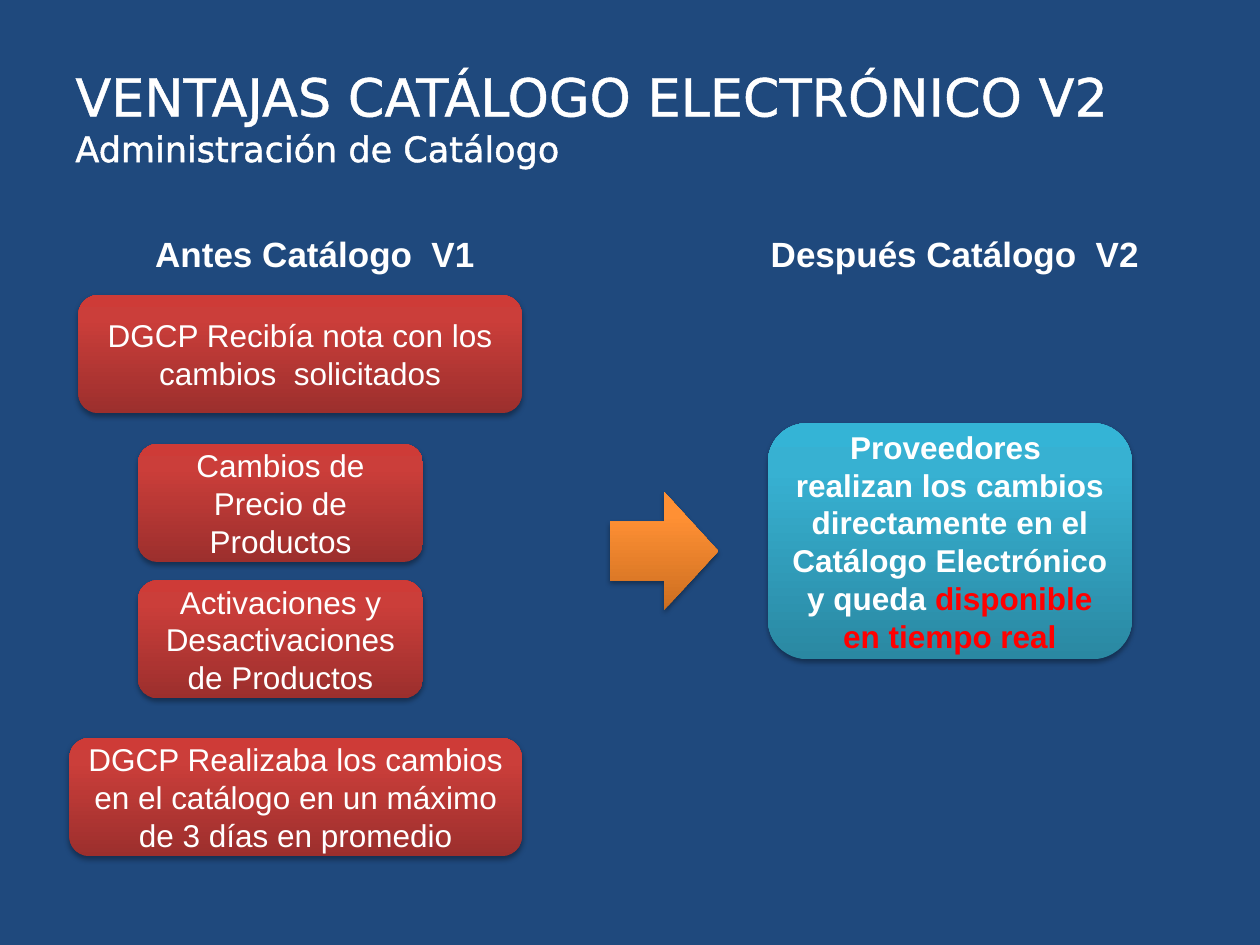
from copy import deepcopy

from lxml.etree import SubElement
from pptx import Presentation
from pptx.dml.color import RGBColor
from pptx.enum.shapes import MSO_SHAPE as Shape
from pptx.enum.text import MSO_ANCHOR as Anchor, PP_ALIGN as Align
from pptx.oxml.ns import qn
from pptx.util import Cm, Pt

COLORS = {"background": "1F497D", "text": "FFFFFF", "accent": "FF0000", "shadow": "000000"}
GRADIENTS = {  # bottom to top
    "red": ("9C2F2D", "CB3E3A", "CE3B37"),
    "blue": ("2A88A2", "37B1D2", "34B4D6"),
    "orange": ("CC6E20", "FF9034", "FF9136"),
}
STOPS = (0, 0.8, 1)

TITLE = [("VENTAJAS CATÁLOGO ELECTRÓNICO V2 ", 30), ("Administración de Catálogo", 20)]
HEADINGS = [("Antes Catálogo  V1", 1.2), ("Después Catálogo  V2", 14.1)]  # text, left
BEFORE = [  # text, left, top, width
    ("DGCP Recibía nota con los cambios  solicitados", 1.58, 5.95, 8.94),
    ("Cambios de Precio de Productos", 2.78, 8.95, 5.75),
    ("Activaciones y Desactivaciones de Productos", 2.78, 11.7, 5.75),
    ("DGCP Realizaba los cambios en el catálogo en un máximo de 3 días en promedio",
     1.4, 14.88, 9.12),
]
AFTER = [  # paragraphs of (text, color)
    [("Proveedores  realizan los cambios directamente en el Catálogo Electrónico", "text")],
    [("y queda ", "text"), ("disponible en tiempo real", "accent")],
]
BOX_H = 2.38


def rgb(name):
    return RGBColor.from_string(COLORS[name])


def add_run(p, text, size, color="text", bold=False, font="Arial"):
    r = p.add_run()
    r.text = text
    r.font.name, r.font.size, r.font.bold = font, Pt(size), bold
    r.font.color.rgb = rgb(color)
    return r


def outline(r, width):
    props = r._r.get_or_add_rPr()
    ln = SubElement(props, qn("a:ln"), w=str(Pt(width)))
    fill = SubElement(ln, qn("a:solidFill"))
    SubElement(fill, qn("a:srgbClr"), val=COLORS["text"])
    props.insert(0, ln)  # the schema wants the outline first


def add_text_box(s, left, top, width, height):
    tf = s.shapes.add_textbox(Cm(left), Cm(top), Cm(width), Cm(height)).text_frame
    tf.word_wrap = True
    return tf


def add_shadow(sp):
    sp.shadow.inherit = False
    effects = sp._element.spPr.find(qn("a:effectLst"))
    shadow = SubElement(effects, qn("a:outerShdw"), blurRad=str(Pt(3.1)),
                        dist=str(Pt(1.8)), dir="5400000", rotWithShape="0")
    color = SubElement(shadow, qn("a:srgbClr"), val=COLORS["shadow"])
    SubElement(color, qn("a:alpha"), val="35000")


def add_glossy(s, kind, gradient, left, top, width, height, paragraphs=(), bold=False):
    """Add a shape with a vertical gradient, a soft shadow and centred text."""
    sp = s.shapes.add_shape(kind, Cm(left), Cm(top), Cm(width), Cm(height))
    sp.line.fill.background()
    sp.fill.gradient()
    sp.fill.gradient_angle = 90
    stop_list = sp._element.spPr.find(qn("a:gradFill")).find(qn("a:gsLst"))
    stop_list.append(deepcopy(stop_list[-1]))
    for stop, position, color in zip(sp.fill.gradient_stops, STOPS, GRADIENTS[gradient]):
        stop.position = position
        stop.color.rgb = RGBColor.from_string(color)
    add_shadow(sp)
    tf = sp.text_frame
    tf.word_wrap = True
    tf.vertical_anchor = Anchor.MIDDLE
    for i, runs in enumerate(paragraphs):
        p = tf.add_paragraph() if i else tf.paragraphs[0]
        p.alignment = Align.CENTER
        for text, color in runs:
            add_run(p, text, 18, color, bold)


def main():
    prs = Presentation()
    prs.slide_width, prs.slide_height = Cm(25.4), Cm(19.05)
    s = prs.slides.add_slide(prs.slide_layouts[6])
    s.background.fill.solid()
    s.background.fill.fore_color.rgb = rgb("background")

    tf = add_text_box(s, 1.27, 0.76, 22.86, 3.18)
    tf.vertical_anchor = Anchor.MIDDLE
    for text, size in TITLE:
        outline(add_run(tf.paragraphs[0], text, size, font="DejaVu Sans"), 1.45)

    for text, left in HEADINGS:
        p = add_text_box(s, left, 4.57, 10.3, 1.11).paragraphs[0]
        p.alignment = Align.CENTER
        add_run(p, text, 20, bold=True)

    for text, left, top, width in BEFORE:
        add_glossy(s, Shape.ROUNDED_RECTANGLE, "red", left, top, width, BOX_H,
                   [[(text, "text")]])
    add_glossy(s, Shape.RIGHT_ARROW, "orange", 12.3, 9.92, 2.18, BOX_H)
    add_glossy(s, Shape.ROUNDED_RECTANGLE, "blue", 15.48, 8.53, 7.34, 2 * BOX_H,
               AFTER, bold=True)

    prs.save("out.pptx")


if __name__ == "__main__":
    main()
